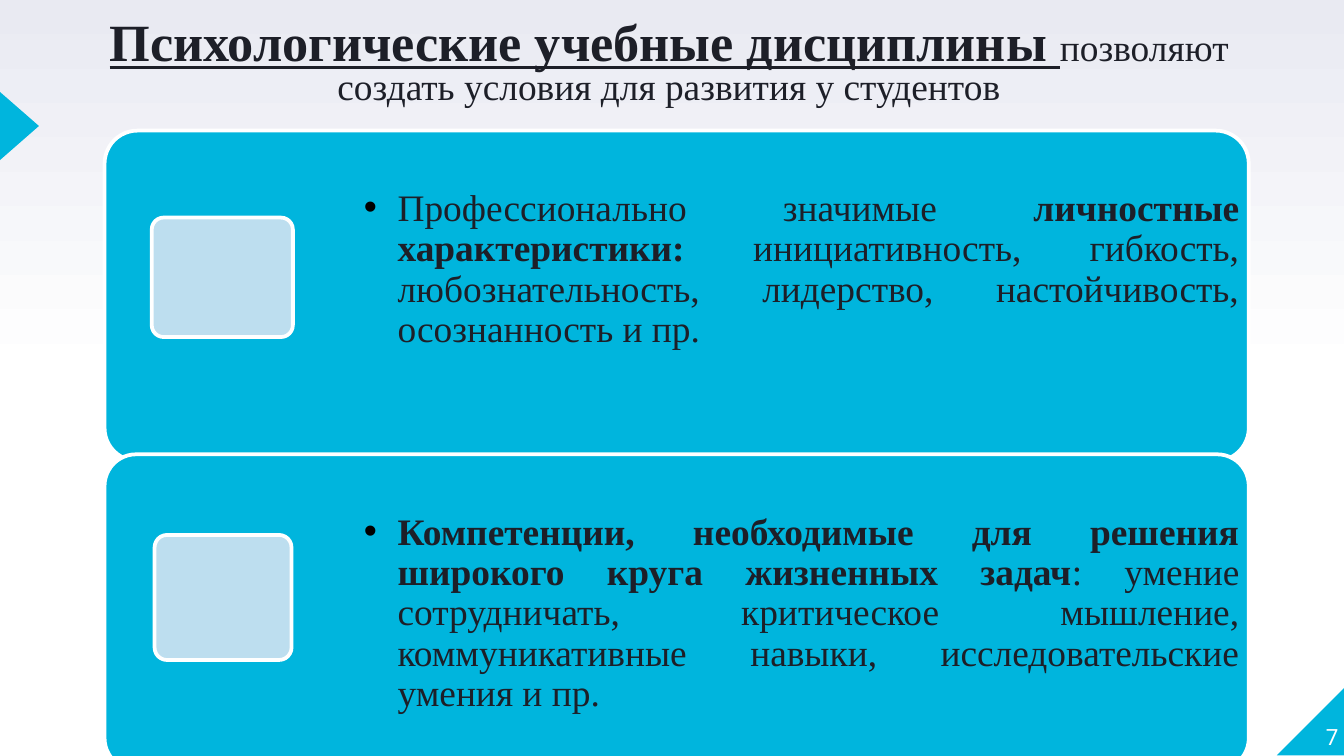
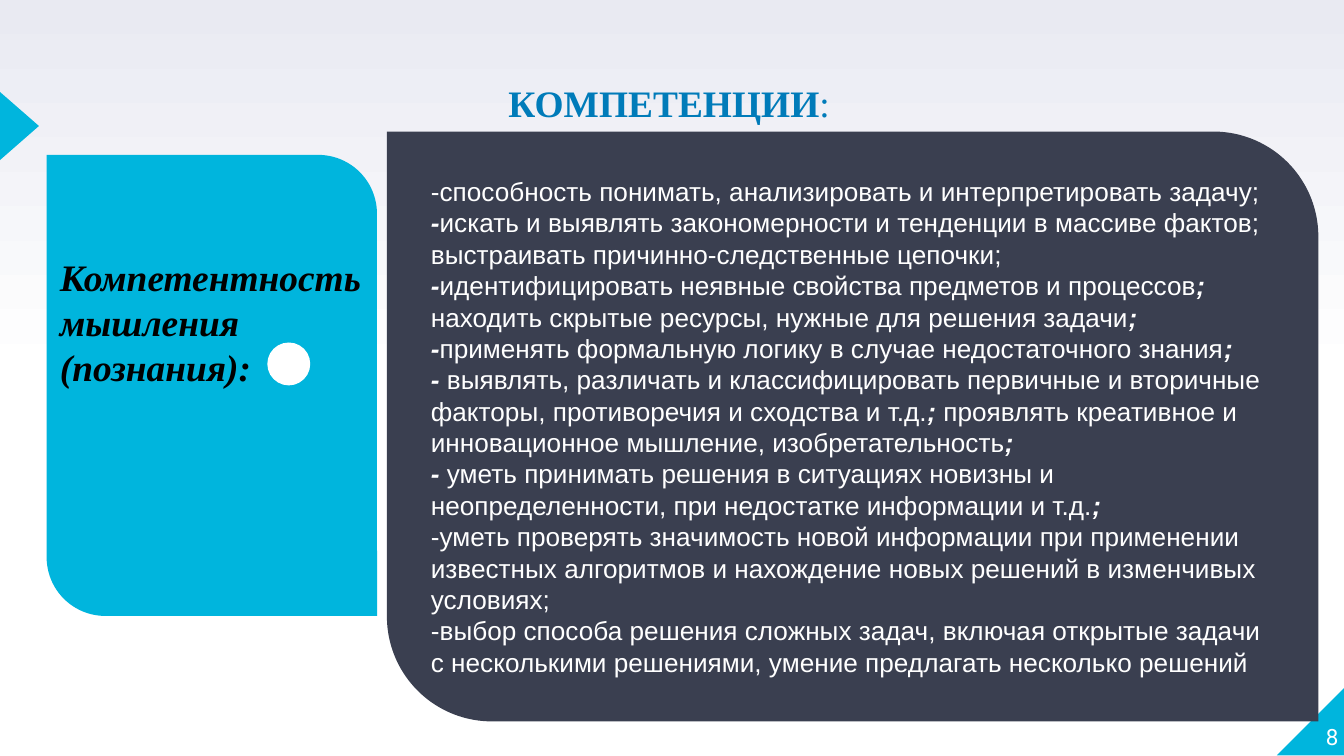
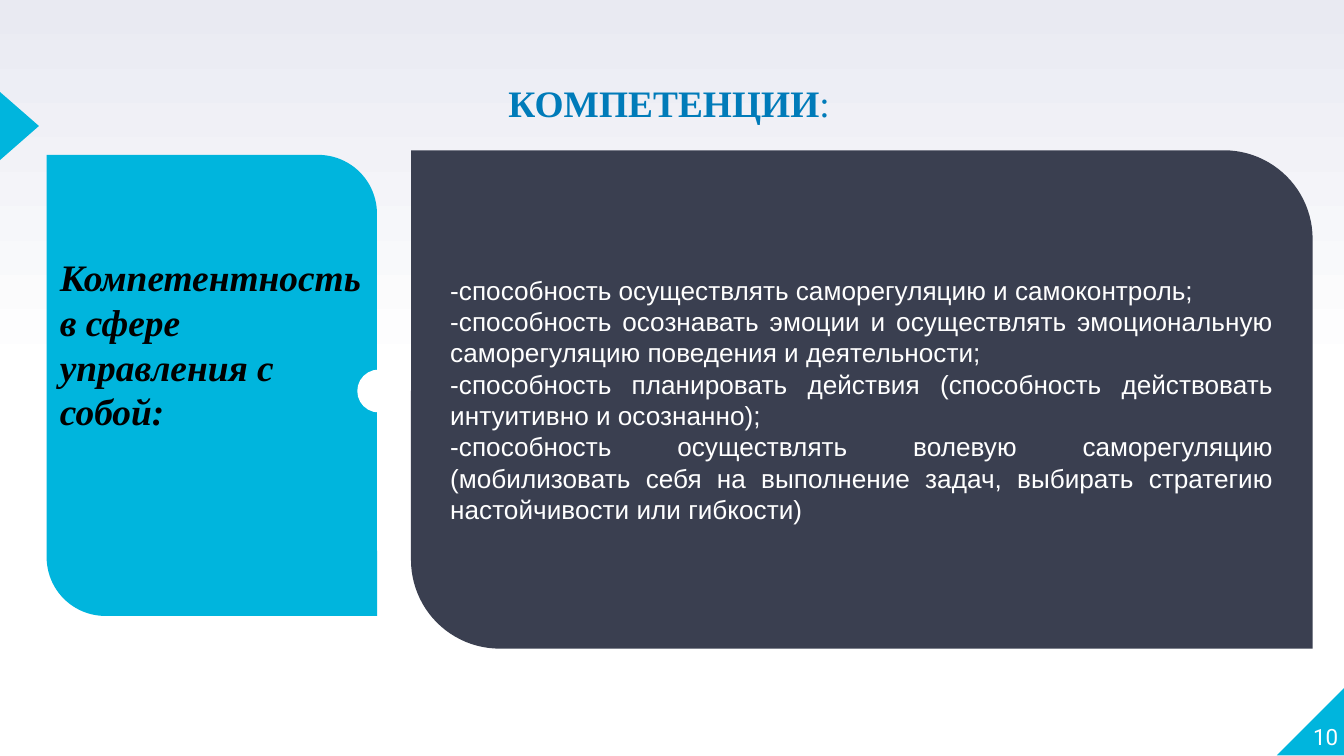
from copy import deepcopy

from pptx import Presentation
from pptx.dml.color import RGBColor
from pptx.enum import shapes, text
from pptx.oxml import ns
from pptx.util import Pt
from lxml import etree

CYAN = RGBColor(0x00, 0xB5, 0xDD)
SLATE = RGBColor(0x3A, 0x3F, 0x50)
PALE_BLUE = RGBColor(0xBD, 0xDE, 0xEF)
TITLE_BLUE = RGBColor(0x00, 0x7B, 0xB9)
INK = RGBColor(0x1D, 0x1F, 0x28)
LAVENDER = RGBColor(0xE9, 0xEA, 0xF2)
WHITE = RGBColor(0xFF, 0xFF, 0xFF)
BLACK = RGBColor(0x00, 0x00, 0x00)
SERIF, SANS, NUMERAL = "Times New Roman", "Arial", "Roboto"

FORM = shapes.MSO_SHAPE
ALIGN = text.PP_ALIGN
ANCHOR = text.MSO_ANCHOR


class Slides:
    """Holds the deck, its style and the slide being filled."""

    def __init__(self):
        self.deck = Presentation()
        self.deck.slide_width, self.deck.slide_height = Pt(720), Pt(405)
        self.page = None
        self.paint_background()

    def paint_background(self):
        master = self.deck.slide_master
        fill = master.background.fill
        fill.gradient()
        fill.gradient_angle = 90
        first = master.element.xpath("./p:cSld/p:bg//a:gs")[0]
        first.addnext(deepcopy(first))
        for stop, (position, color) in zip(
                fill.gradient_stops, [(0, WHITE), (0.5, WHITE), (1, LAVENDER)]):
            stop.position = position
            stop.color.rgb = color

    def new_page(self, number):
        self.page = self.deck.slides.add_slide(self.deck.slide_layouts[6])
        self.shape(FORM.RIGHT_TRIANGLE, (684, 368, 36.7, 36.7), CYAN).rotation = 270
        self.shape(FORM.ISOSCELES_TRIANGLE, (-8, 57, 36.7, 21), CYAN).rotation = 90
        frame = self.text_box((681, 365, 36, 36.7), anchor=ANCHOR.BOTTOM)
        self.add_text(frame, [[(number, "")]], NUMERAL, 12, WHITE, ALIGN.RIGHT)

    def shape(self, form, place, color, adjust=(), outline=None):
        shape = self.page.shapes.add_shape(form, *map(Pt, place))
        shape.shadow.inherit = False
        for index, value in enumerate(adjust):
            shape.adjustments[index] = value
        shape.fill.solid()
        shape.fill.fore_color.rgb = color
        if outline is None:
            shape.line.fill.background()
        else:
            shape.line.color.rgb = outline
            shape.line.width = Pt(2)
        return shape

    def text_box(self, place, inset=0, anchor=ANCHOR.TOP):
        box = self.page.shapes.add_textbox(*map(Pt, place))
        return self.set_frame(box.text_frame, inset, anchor)

    def set_frame(self, frame, inset, anchor):
        frame.word_wrap = True
        frame.vertical_anchor = anchor
        frame.margin_left = frame.margin_right = Pt(inset)
        frame.margin_top = frame.margin_bottom = Pt(inset)
        return frame

    def add_text(self, frame, paragraphs, font, size, color, align=ALIGN.LEFT, spacing=None):
        """Each paragraph is a list of (words, style); style letters are b, i, u."""
        for index, spans in enumerate(paragraphs):
            para = frame.paragraphs[0] if index == 0 else frame.add_paragraph()
            para.alignment = align
            if spacing:
                para.line_spacing = spacing
            for words, style in spans:
                span = para.add_run()
                span.text = words
                span.font.name = font
                span.font.size = Pt(size)
                span.font.color.rgb = color
                span.font.bold = "b" in style
                span.font.italic = "i" in style
                span.font.underline = "u" in style
        return frame.paragraphs

    def title(self, spans, top, height, color):
        frame = self.text_box((36, top, 645, height))
        return self.add_text(frame, [spans], SERIF, 20, color, ALIGN.CENTER, 0.8)[0]

    def bullet(self, para):
        para.level = 1
        props = para._p.get_or_add_pPr()
        props.set("marL", str(Pt(18)))
        props.set("indent", str(-Pt(18)))
        tint = etree.SubElement(props, ns.qn("a:buClr"))
        etree.SubElement(tint, ns.qn("a:srgbClr")).set("val", str(BLACK))
        etree.SubElement(props, ns.qn("a:buFont")).set("typeface", SANS)
        etree.SubElement(props, ns.qn("a:buChar")).set("char", "•")

    def card(self, top, height, spans, tile):
        self.shape(FORM.ROUNDED_RECTANGLE, (56, top, 613, height), CYAN, [0.1], WHITE)
        frame = self.text_box((190, top, 479, height), inset=5)
        frame.margin_top = Pt(31.4)
        para = self.add_text(frame, [spans], SERIF, 20, INK, ALIGN.JUSTIFY, 0.9)[0]
        self.bullet(para)
        self.shape(FORM.ROUNDED_RECTANGLE, tile, PALE_BLUE, [0.1], WHITE)

    def competence(self, number, name, panel, paragraphs, align, dot):
        self.new_page(number)
        self.title([("КОМПЕТЕНЦИИ", "b"), (":", "")], 47.5, 27.4, TITLE_BLUE)
        # Name of the competence
        leaf = FORM.ROUND_2_DIAG_RECTANGLE
        self.shape(leaf, (25, 83, 177, 247), CYAN, [0, 0.178])
        frame = self.text_box((25, 129, 182, 196), inset=7.2)
        self.add_text(frame, [[(name, "bi")]], SERIF, 20, BLACK)
        # What it consists of
        board = self.shape(leaf, panel, SLATE, [0, 0.178])
        frame = self.set_frame(board.text_frame, 7.2, ANCHOR.MIDDLE)
        self.add_text(frame, paragraphs, SANS, 14, WHITE, align)
        self.shape(FORM.OVAL, (*dot, 23, 23), WHITE)


def main():
    slides = Slides()

    # Psychological disciplines
    slides.new_page("7")
    heading = slides.title(
        [("Психологические учебные дисциплины ", "bu"),
         ("позволяют создать условия для развития у студентов", "")], 11.5, 33, INK)
    heading.runs[0].font.size = Pt(28)
    slides.card(
        70, 177,
        [("Профессионально значимые ", ""), ("личностные характеристики:", "b"),
         (" инициативность, гибкость, любознательность, лидерство, настойчивость, "
          "осознанность и пр.", "")],
        (81.3, 116.6, 75.6, 64))
    slides.card(
        243.4, 169,
        [("Компетенции, необходимые для решения широкого круга жизненных задач", "b"),
         (": умение сотрудничать, критическое мышление, коммуникативные навыки, "
          "исследовательские умения и пр.", "")],
        (82.8, 286.6, 73.4, 67))

    # Thinking
    dash, end = ("-", "bi"), (";", "bi")
    slides.competence(
        "8", "Компетентность мышления (познания):", (207.3, 70.5, 499, 316),
        [[("-способность понимать, анализировать и интерпретировать задачу;", "")],
         [dash, ("искать и выявлять закономерности и тенденции в массиве фактов; "
                 "выстраивать причинно-следственные цепочки;", "")],
         [dash, ("идентифицировать неявные свойства предметов и процессов", ""),
          ("; ", "bi"), ("находить скрытые ресурсы, нужные для решения задачи", ""), end],
         [dash, ("применять формальную логику в случае недостаточного знания", ""), end],
         [("- ", "bi"),
          ("выявлять, различать и классифицировать первичные и вторичные факторы, "
           "противоречия и сходства и т.д.", ""), ("; ", "bi"),
          ("проявлять креативное и инновационное мышление, изобретательность", ""), end],
         [("- ", "bi"),
          ("уметь принимать решения в ситуациях новизны и неопределенности, "
           "при недостатке информации и т.д.", ""), end],
         [("-уметь проверять значимость новой информации при применении известных "
           "алгоритмов и нахождение новых решений в изменчивых условиях;", "")],
         [("-выбор способа решения сложных задач, включая открытые задачи с несколькими "
           "решениями, умение предлагать несколько решений", "")]],
        ALIGN.LEFT, (143.2, 183.5))

    # Self-management
    abilities = [
        "осуществлять саморегуляцию и самоконтроль;",
        "осознавать эмоции и осуществлять эмоциональную саморегуляцию поведения "
        "и деятельности;",
        "планировать действия (способность действовать интуитивно и осознанно);",
        "осуществлять волевую саморегуляцию (мобилизовать себя на выполнение задач, "
        "выбирать стратегию настойчивости или гибкости)",
    ]
    slides.competence(
        "10", "Компетентность в сфере управления с собой:", (220.2, 80.5, 483, 267),
        [[("-способность " + ability, "")] for ability in abilities],
        ALIGN.JUSTIFY, (191.4, 198))

    slides.deck.save("out.pptx")


if __name__ == "__main__":
    main()
